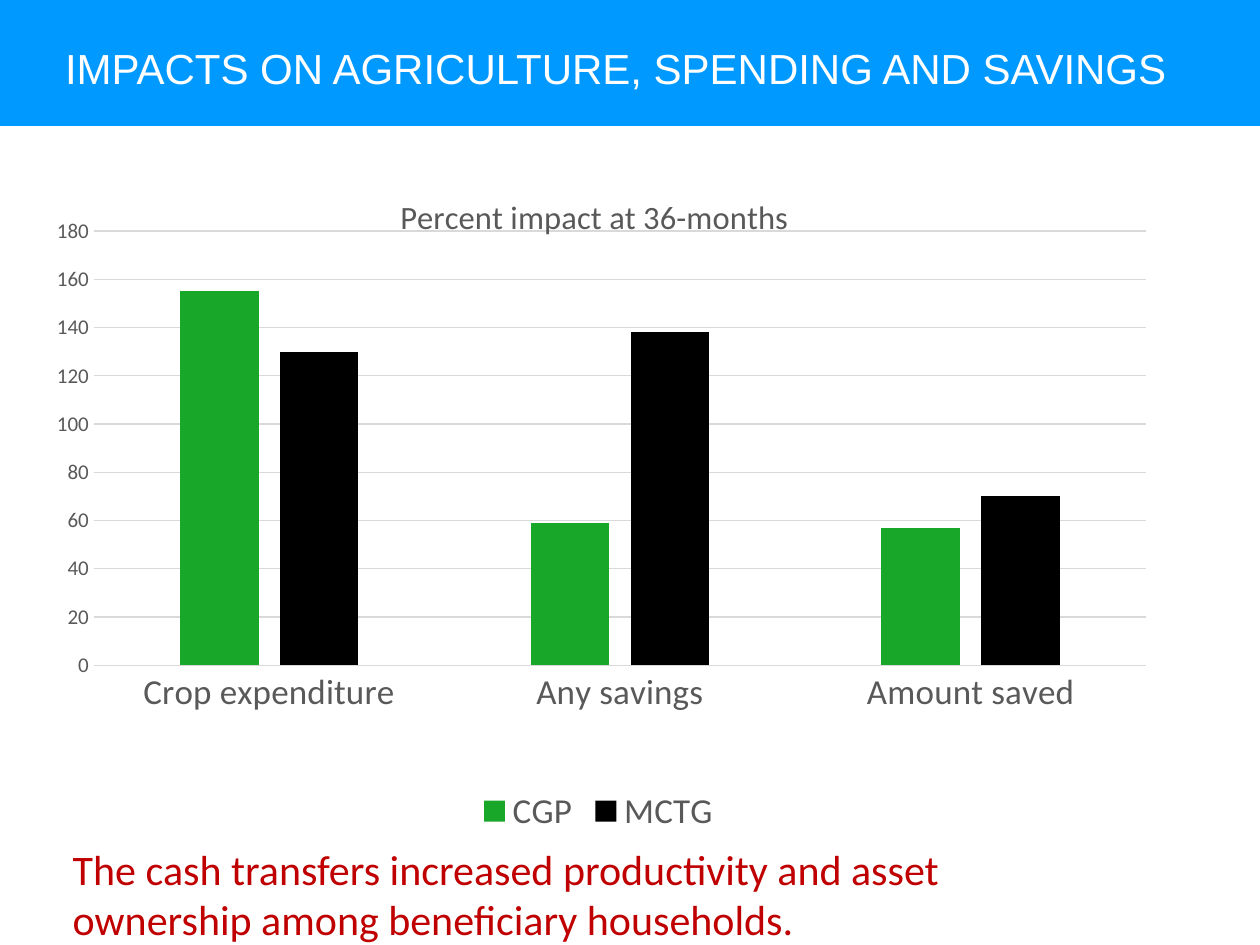
from dataclasses import dataclass

from lxml.etree import SubElement
from pptx import Presentation
from pptx.chart.data import CategoryChartData
from pptx.dml.color import RGBColor as RGB
from pptx.enum.chart import XL_CHART_TYPE as ChartType
from pptx.enum.chart import XL_LEGEND_POSITION as LegendPosition
from pptx.enum.chart import XL_TICK_MARK as TickMark
from pptx.enum.shapes import MSO_SHAPE as Shape
from pptx.enum.text import MSO_ANCHOR as Anchor
from pptx.enum.text import PP_ALIGN as Align
from pptx.oxml.ns import qn
from pptx.util import Pt

TITLE = "IMPACTS ON AGRICULTURE, SPENDING AND SAVINGS"
CHART_TITLE = "Percent impact at 36-months"
CATEGORIES = ["Crop expenditure", "Any savings", "Amount saved"]
SERIES = [
    ("CGP", [155, 59, 57], RGB(0x19, 0xA7, 0x2A)),
    ("MCTG", [130, 138, 70], RGB(0, 0, 0)),
]
TAKEAWAY = "The cash transfers increased productivity and asset ownership among beneficiary households."

SLIDE_SIZE = (720, 540)
BAND_AREA = (-0.5, 0, 720.5, 72)
TITLE_AREA = (30, 19, 656, 39.5)
CHART_AREA = (18, 96, 648, 384)
TAKEAWAY_AREA = (34.5, 478.5, 553.5, 65.5)
PLOT_LAYOUT = {"layoutTarget": "inner", "xMode": "edge", "yMode": "edge",
               "x": 0.055, "y": 0.094, "w": 0.928, "h": 0.646}
CHART_TITLE_LAYOUT = {"xMode": "edge", "yMode": "edge", "x": 0.32, "y": 0.03}


@dataclass(frozen=True)
class Theme:
    heading_font: str = "Arial"
    body_font: str = "Calibri"
    band: RGB = RGB(0x00, 0x99, 0xFF)
    white: RGB = RGB(0xFF, 0xFF, 0xFF)
    black: RGB = RGB(0, 0, 0)
    gray: RGB = RGB(0x59, 0x59, 0x59)
    grid: RGB = RGB(0xD9, 0xD9, 0xD9)
    red: RGB = RGB(0xC0, 0x00, 0x00)
    text_size: int = 24
    label_size: int = 20
    chart_title_size: float = 18.6
    scale_size: int = 12
    chart_size: int = 10
    line: float = 0.75


theme = Theme()


def points(area):
    return [Pt(length) for length in area]


def style_font(font, name, size, color):
    font.name = name
    font.size = Pt(size)
    font.bold = False
    font.color.rgb = color


def style_line(line):
    line.color.rgb = theme.grid
    line.width = Pt(theme.line)


def write(frame, text, name, size, color):
    para = frame.paragraphs[0]
    span = para.add_run()
    span.text = text
    style_font(span.font, name, size, color)
    return para


def set_layout(layout, values):
    for child in list(layout):
        layout.remove(child)
    manual = SubElement(layout, qn("c:manualLayout"))
    for tag, value in values.items():
        SubElement(manual, qn(f"c:{tag}")).set("val", str(value))


def add_title(page):
    title = page.shapes.title
    title.left, title.top, title.width, title.height = points(TITLE_AREA)
    frame = title.text_frame
    frame.word_wrap = True
    frame.vertical_anchor = Anchor.MIDDLE
    para = write(frame, TITLE, theme.heading_font, theme.text_size, theme.white)
    para.alignment = Align.LEFT

    band = page.shapes.add_shape(Shape.RECTANGLE, *points(BAND_AREA))
    band.shadow.inherit = False
    band.fill.solid()
    band.fill.fore_color.rgb = theme.band
    band.line.fill.background()
    title._element.addprevious(band._element)


def style_chart_title(chart):
    chart.has_title = True
    write(chart.chart_title.text_frame, CHART_TITLE, theme.body_font,
          theme.chart_title_size, theme.gray)
    chart.chart_title.include_in_layout = False
    element = chart.chart_title._element
    layout = element.find(qn("c:layout"))
    if layout is None:
        layout = SubElement(element, qn("c:layout"))
        element.find(qn("c:tx")).addnext(layout)
    set_layout(layout, CHART_TITLE_LAYOUT)


def style_axes(chart):
    category_axis, value_axis = chart.category_axis, chart.value_axis
    for axis, size in ((category_axis, theme.label_size), (value_axis, theme.scale_size)):
        axis.major_tick_mark = axis.minor_tick_mark = TickMark.NONE
        style_font(axis.tick_labels.font, theme.body_font, size, theme.gray)
    style_line(category_axis.format.line)
    value_axis.format.line.fill.background()
    value_axis.minimum_scale, value_axis.maximum_scale = 0, 180
    value_axis.major_unit = 20
    value_axis.has_major_gridlines = True
    style_line(value_axis.major_gridlines.format.line)


def add_impact_chart(page):
    data = CategoryChartData()
    data.categories = CATEGORIES
    for name, values, _ in SERIES:
        data.add_series(name, values)
    chart = page.shapes.add_chart(ChartType.COLUMN_CLUSTERED, *points(CHART_AREA), data).chart
    style_font(chart.font, theme.body_font, theme.chart_size, theme.black)
    style_chart_title(chart)
    style_axes(chart)

    plot = chart.plots[0]
    plot.gap_width, plot.overlap = 219, -27
    plot.vary_by_categories = False
    for series, (_, _, color) in zip(plot.series, SERIES):
        series.format.fill.solid()
        series.format.fill.fore_color.rgb = color

    chart.has_legend = True
    chart.legend.position = LegendPosition.BOTTOM
    chart.legend.include_in_layout = False
    style_font(chart.legend.font, theme.body_font, theme.label_size, theme.gray)

    area = chart._chartSpace.chart.plotArea
    layout = area.find(qn("c:layout"))
    if layout is None:
        layout = SubElement(area, qn("c:layout"))
        area.insert(0, layout)
    set_layout(layout, PLOT_LAYOUT)


def add_takeaway(page):
    box = page.shapes.add_textbox(*points(TAKEAWAY_AREA))
    box.text_frame.word_wrap = True
    write(box.text_frame, TAKEAWAY, theme.body_font, theme.text_size, theme.red)


def main():
    deck = Presentation()
    deck.slide_width, deck.slide_height = points(SLIDE_SIZE)
    page = deck.slides.add_slide(deck.slide_layouts[5])
    add_title(page)
    add_impact_chart(page)
    add_takeaway(page)
    deck.save("out.pptx")


if __name__ == "__main__":
    main()
